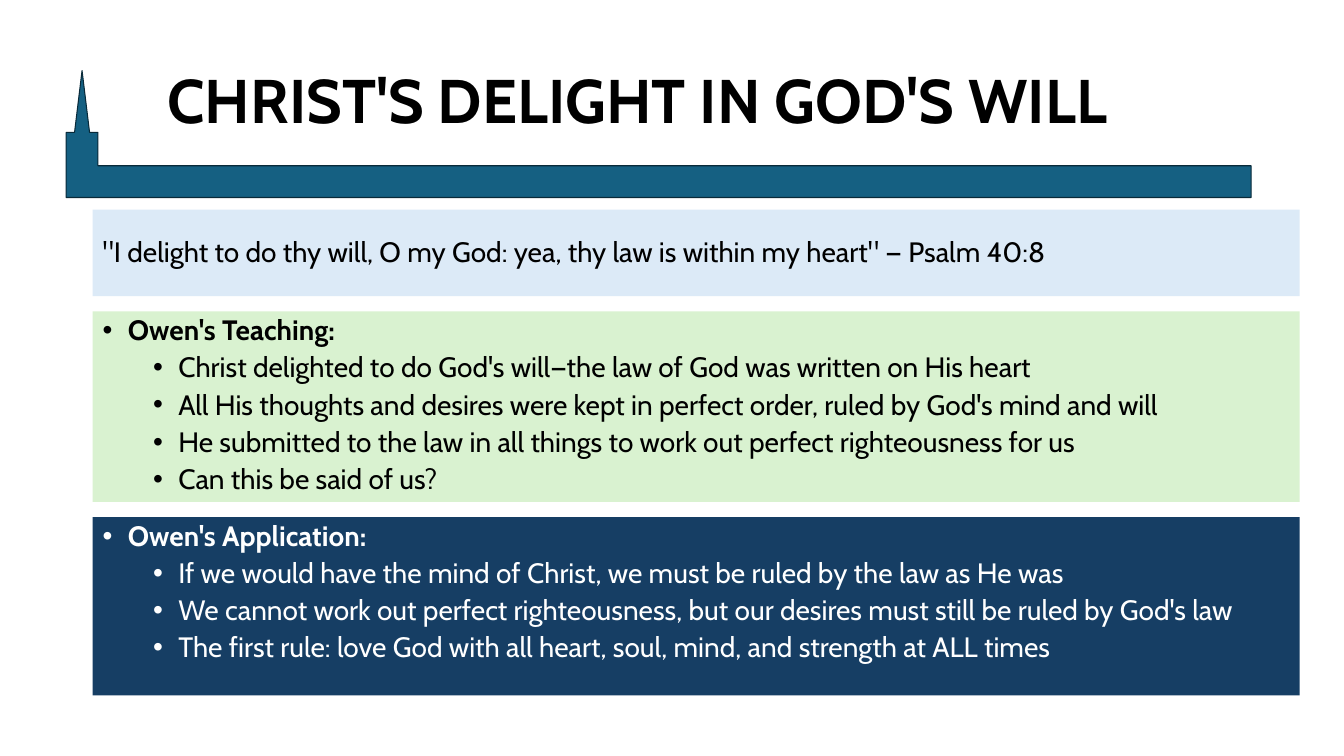
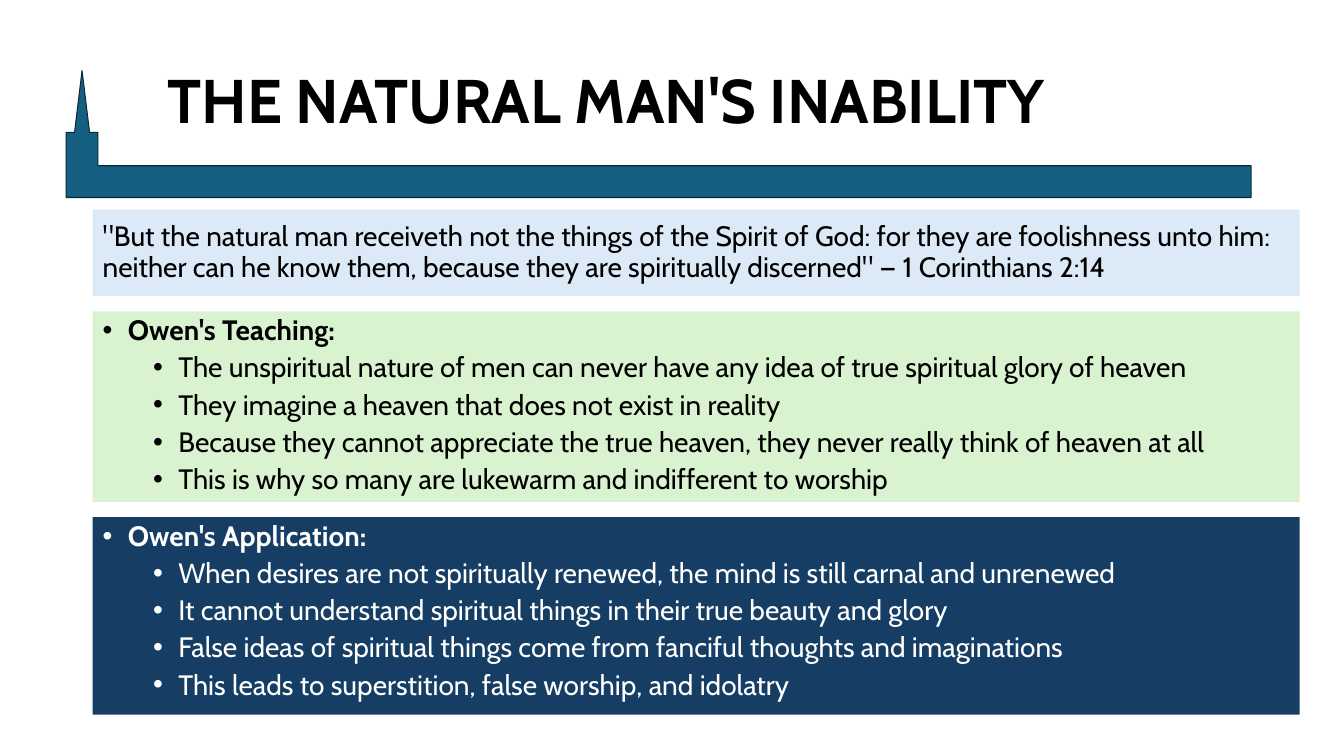
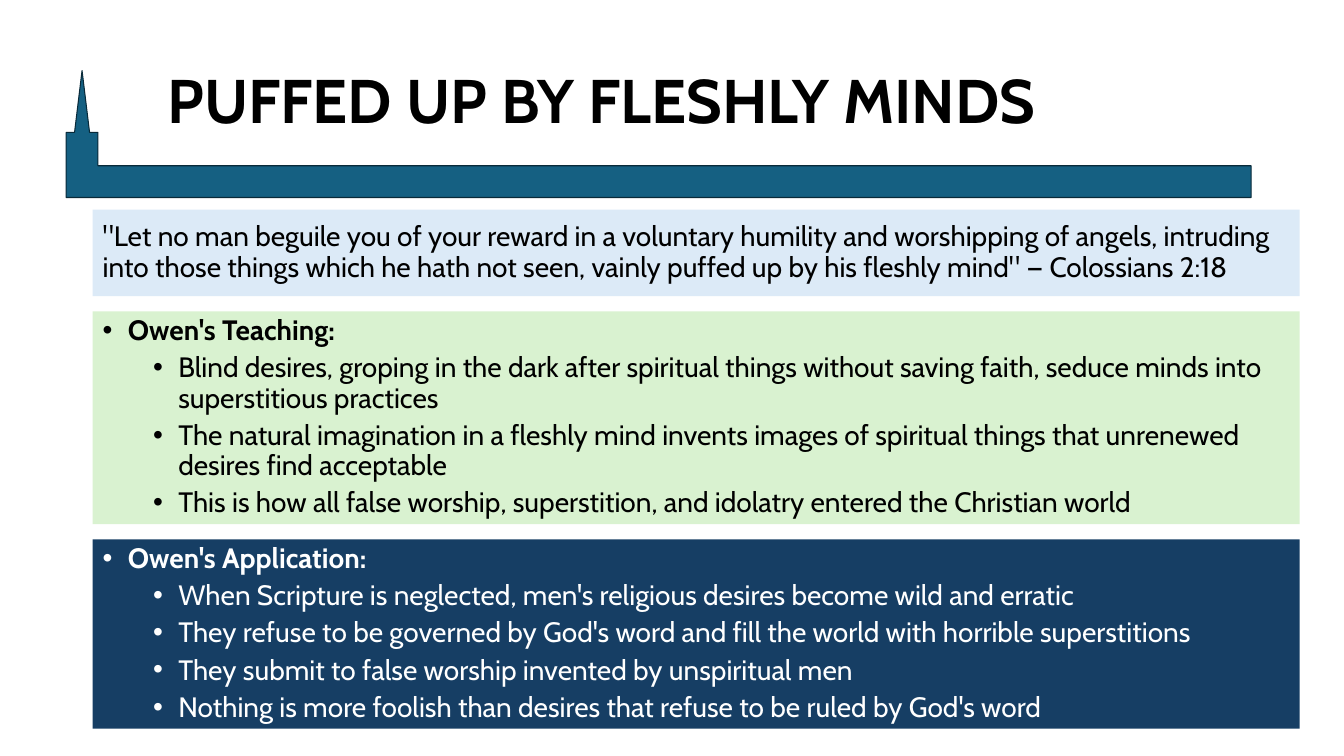
from lxml.etree import SubElement
from pptx import Presentation
from pptx.dml.color import RGBColor
from pptx.enum.shapes import MSO_SHAPE as Shape
from pptx.enum.text import MSO_ANCHOR as Anchor, MSO_AUTO_SIZE as AutoSize, PP_ALIGN as Align
from pptx.oxml.ns import qn
from pptx.util import Inches, Pt

FONT = "Cabin"
BLACK, WHITE = "000000", "FFFFFF"
STEEPLE, STEEPLE_EDGE = "156082", "092A39"
QUOTE_FILL, TEACHING_FILL, APPLICATION_FILL = "DCEAF7", "D9F2D0", "163E64"

TITLE_BOX = (1.56, 0.4, 10.86, 1.26)
STEEPLE_BOX = (0.74, 0.7, 11.67, 1.26)
PANEL_LEFT, PANEL_WIDTH, PANEL_GAP = 0.92, 11.97, 0.15
QUOTE_TOP, QUOTE_HEIGHT = 2.08, 0.86

SERMON = [
    {
        "title": "CHRIST'S DELIGHT IN GOD'S WILL",
        "quote": "\"I delight to do thy will, O my God: yea, thy law is within my heart\" — Psalm 40:8",
        "heights": (1.89, 1.77),
        "teaching": [
            "Christ delighted to do God's will—the law of God was written on His heart",
            "All His thoughts and desires were kept in perfect order, ruled by God's mind and will",
            "He submitted to the law in all things to work out perfect righteousness for us",
            "Can this be said of us?",
        ],
        "application": [
            "If we would have the mind of Christ, we must be ruled by the law as He was",
            "We cannot work out perfect righteousness, but our desires must still be ruled by God's law",
            "The first rule: love God with all heart, soul, mind, and strength at ALL times",
        ],
    },
    {
        "title": "THE NATURAL MAN'S INABILITY",
        "quote": "\"But the natural man receiveth not the things of the Spirit of God: for they are "
                 "foolishness unto him: neither can he know them, because they are spiritually "
                 "discerned\" — 1 Corinthians 2:14",
        "heights": (1.89, 1.96),
        "teaching": [
            "The unspiritual nature of men can never have any idea of true spiritual glory of heaven",
            "They imagine a heaven that does not exist in reality",
            "Because they cannot appreciate the true heaven, they never really think of heaven at all",
            "This is why so many are lukewarm and indifferent to worship",
        ],
        "application": [
            "When desires are not spiritually renewed, the mind is still carnal and unrenewed",
            "It cannot understand spiritual things in their true beauty and glory",
            "False ideas of spiritual things come from fanciful thoughts and imaginations",
            "This leads to superstition, false worship, and idolatry",
        ],
    },
    {
        "title": "PUFFED UP BY FLESHLY MINDS",
        "quote": "\"Let no man beguile you of your reward in a voluntary humility and worshipping of "
                 "angels, intruding into those things which he hath not seen, vainly puffed up by his "
                 "fleshly mind\" — Colossians 2:18",
        "heights": (2.11, 1.88),
        "teaching": [
            "Blind desires, groping in the dark after spiritual things without saving faith, "
            "seduce minds into superstitious practices",
            "The natural imagination in a fleshly mind invents images of spiritual things that "
            "unrenewed desires find acceptable",
            "This is how all false worship, superstition, and idolatry entered the Christian world",
        ],
        "application": [
            "When Scripture is neglected, men's religious desires become wild and erratic",
            "They refuse to be governed by God's word and fill the world with horrible superstitions",
            "They submit to false worship invented by unspiritual men",
            "Nothing is more foolish than desires that refuse to be ruled by God's word",
        ],
    },
]


def paint(color_format, hex_color):
    color_format.rgb = RGBColor.from_string(hex_color)


def style(paragraph, size, color, bold=False):
    paragraph.alignment = Align.LEFT
    paragraph.line_spacing = 0.9
    font = paragraph.font
    font.name, font.size, font.bold = FONT, Pt(size), bold
    paint(font.color, color)


def add_bullet(paragraph, level):
    """Give the paragraph a hanging bullet, half an inch deeper per level."""
    paragraph.level = level
    properties = paragraph._p.get_or_add_pPr()
    properties.set("marL", str(Inches(0.25 + 0.5 * level)))
    properties.set("indent", str(Inches(-0.25)))
    SubElement(properties, qn("a:buFont"), typeface="Arial")
    SubElement(properties, qn("a:buChar"), char="•")


def add_filled(slide, preset, box, fill):
    shape = slide.shapes.add_shape(preset, *map(Inches, box))
    shape.shadow.inherit = False
    shape.fill.solid()
    paint(shape.fill.fore_color, fill)
    return shape


def add_steeple(slide, box):
    steeple = add_filled(slide, Shape.BENT_UP_ARROW, box, STEEPLE)
    for index, share in enumerate((0.25, 0.059, 0.487)):
        steeple.adjustments[index] = share
    steeple._element.spPr.xfrm.set("flipH", "1")
    paint(steeple.line.color, STEEPLE_EDGE)
    steeple.line.width = Pt(0.75)


def place_title(slide, text, box):
    title = slide.shapes.title
    title.left, title.top, title.width, title.height = map(Inches, box)
    frame = title.text_frame
    frame.text = text
    frame.auto_size = AutoSize.NONE
    frame.vertical_anchor = Anchor.MIDDLE
    style(frame.paragraphs[0], 44, BLACK, bold=True)


def add_panel(slide, box, fill, anchor):
    """Add a borderless colour block and return its text frame."""
    panel = add_filled(slide, Shape.RECTANGLE, box, fill)
    panel.line.fill.background()
    frame = panel.text_frame
    frame.word_wrap = True
    frame.vertical_anchor = anchor
    return frame


def add_quote(slide, text, box):
    frame = add_panel(slide, box, QUOTE_FILL, Anchor.MIDDLE)
    frame.text = text
    style(frame.paragraphs[0], 20, BLACK)


def add_points(slide, heading, points, box, fill, color):
    frame = add_panel(slide, box, fill, Anchor.TOP)
    frame.text = "\n".join([heading, *points])
    for index, paragraph in enumerate(frame.paragraphs):
        is_point = index > 0
        add_bullet(paragraph, int(is_point))
        style(paragraph, 20, color, bold=not is_point)
        if is_point:
            paragraph.space_before = Pt(5)


def add_sermon_slide(deck, part):
    slide = deck.slides.add_slide(deck.slide_layouts[5])
    add_steeple(slide, STEEPLE_BOX)
    place_title(slide, part["title"], TITLE_BOX)
    add_quote(slide, part["quote"], (PANEL_LEFT, QUOTE_TOP, PANEL_WIDTH, QUOTE_HEIGHT))
    sections = (
        ("Owen's Teaching:", part["teaching"], TEACHING_FILL, BLACK),
        ("Owen's Application:", part["application"], APPLICATION_FILL, WHITE),
    )
    top = QUOTE_TOP + QUOTE_HEIGHT + PANEL_GAP
    for (heading, points, fill, color), height in zip(sections, part["heights"]):
        add_points(slide, heading, points, (PANEL_LEFT, top, PANEL_WIDTH, height), fill, color)
        top += height + PANEL_GAP


def main():
    deck = Presentation()
    deck.slide_width, deck.slide_height = Inches(13.33), Inches(7.5)
    for part in SERMON:
        add_sermon_slide(deck, part)
    deck.save("out.pptx")


if __name__ == "__main__":
    main()
